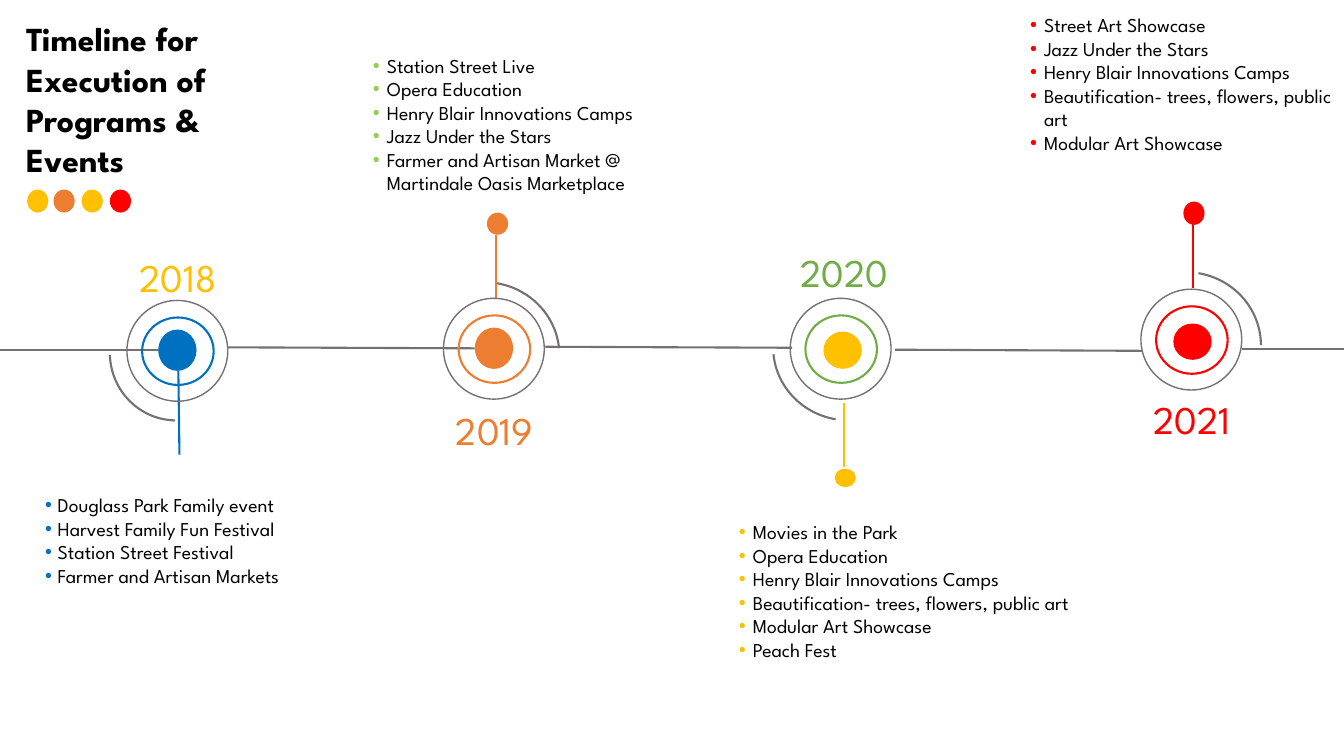
from lxml import etree
from pptx import Presentation
from pptx.dml.color import RGBColor
from pptx.enum.shapes import MSO_CONNECTOR as CONN, MSO_SHAPE as SHAPE
from pptx.enum.text import MSO_ANCHOR as ANCHOR, MSO_AUTO_SIZE as AUTO, PP_ALIGN as ALIGN
from pptx.oxml import parse_xml
from pptx.oxml.ns import nsdecls, qn
from pptx.util import Pt

COLORS = {
    "yellow": "FFC000", "orange": "ED7D31", "red": "FF0000", "blue": "0070C0",
    "green": "70AD47", "lime": "92D050", "gray": "767171", "black": "000000",
}
RGB = {name: RGBColor.from_string(value) for name, value in COLORS.items()}
FONT = "League Spartan"


def add_mark(shapes, kind, box, fill=None, line=None, width=1.5):
    sp = shapes.add_shape(kind, *map(Pt, box))
    sp.shadow.inherit = False
    if fill:
        sp.fill.solid()
        sp.fill.fore_color.rgb = RGB[fill]
    else:
        sp.fill.background()
    if line:
        sp.line.color.rgb = RGB[line]
        sp.line.width = Pt(width)
    else:
        sp.line.fill.background()
    return sp


def write_text(sp, box, lines, size, color="black", bold=False, align=ALIGN.LEFT, bullet=None):
    sp.left, sp.top, sp.width, sp.height = map(Pt, box)
    tf = sp.text_frame
    frame = {
        "word_wrap": True, "auto_size": AUTO.NONE, "vertical_anchor": ANCHOR.TOP,
        "margin_left": Pt(7.2), "margin_right": Pt(7.2),
        "margin_top": Pt(3.6), "margin_bottom": Pt(3.6),
    }
    for name, value in frame.items():
        setattr(tf, name, value)
    for i, text in enumerate(lines):
        p = tf.add_paragraph() if i else tf.paragraphs[0]
        if bullet:
            bullet_color, margin, hang = bullet
            pPr = p._p.get_or_add_pPr()
            pPr.set("marL", str(Pt(margin)))
            pPr.set("indent", str(-Pt(hang)))
            for xml in (
                f'<a:buClr {nsdecls("a")}><a:srgbClr val="{COLORS[bullet_color]}"/></a:buClr>',
                f'<a:buFont {nsdecls("a")} typeface="Arial"/>',
                f'<a:buChar {nsdecls("a")} char="•"/>',
            ):
                pPr.append(parse_xml(xml))
        layout = {"alignment": align, "space_before": Pt(0), "space_after": Pt(0), "line_spacing": 1.0}
        for name, value in layout.items():
            setattr(p, name, value)
        r = p.add_run()
        r.text = text
        for name, value in {"name": FONT, "size": Pt(size), "bold": bold}.items():
            setattr(r.font, name, value)
        r.font.color.rgb = RGB[color]


prs = Presentation()
prs.slide_width, prs.slide_height = Pt(960), Pt(540)
s = prs.slides.add_slide(prs.slide_layouts[4])

write_text(s.shapes.title, (11.5, 9.4, 169.2, 123.8),
           ["Timeline for Execution of Programs & Events"], 24, bold=True)

title_dots = s.shapes.add_group_shape()
for x, color in ((19.4, "yellow"), (38.2, "orange"), (58.3, "yellow"), (78.5, "red")):
    add_mark(title_dots.shapes, SHAPE.OVAL, (x, 135.4, 15.1, 16.4), fill=color)

WIDE_ARC = (167.96, 212.73)
milestones = [
    {
        "year": "2018", "label": (73.4, 177.1), "label_color": "yellow",
        "ring": (90.7, 214.6), "ring_color": "blue",
        "dot": (113, 235.4, 27.4, 29.5), "dot_color": "blue",
        "stem": (127.4, 265, 128.2, 324.7), "pin": None,
        "arc": (78.5, 204.5, 94.3, 95.8), "turn": 171.8, "sweep": (167.37, 4.07),
        "box": (11.5, 348.5, 259.2, 97.2), "bullet": ("blue", 22.5, 9),
        "events": ["Douglass Park Family event", "Harvest Family Fun Festival",
                   "Station Street Festival", "Farmer and Artisan Markets"],
    },
    {
        "year": "2019", "label": (299.5, 286.6), "label_color": "orange",
        "ring": (316.8, 213.1), "ring_color": "orange",
        "dot": (339.1, 234, 27.4, 29.5), "dot_color": "orange",
        "stem": (354.2, 167.8, 354.2, 213.1), "pin": (347.8, 151.9, 15.1, 15.8),
        "arc": (292.3, 201.6, 107.3, 104.4), "turn": 0, "sweep": WIDE_ARC,
        "box": (259.2, 34.6, 239, 108.7), "bullet": ("lime", 10, 10),
        "events": ["Station Street Live", "Opera Education",
                   "Henry Blair Innovations Camps", "Jazz Under the Stars",
                   "Farmer and Artisan Market @ Martindale Oasis Marketplace"],
    },
    {
        "year": "2020", "label": (549.4, 174.2), "label_color": "green",
        "ring": (564.5, 213.1), "ring_color": "green",
        "dot": (588.2, 236.9, 27.4, 26.6), "dot_color": "yellow",
        "stem": (603.1, 288, 603.1, 333.4), "pin": (596.2, 334.8, 15.1, 13),
        "arc": (552.2, 195.8, 107.3, 104.4), "turn": 180, "sweep": WIDE_ARC,
        "box": (520.6, 367.9, 277.9, 143.3), "bullet": ("yellow", 10, 10),
        "events": ["Movies in the Park", "Opera Education",
                   "Henry Blair Innovations Camps",
                   "Beautification- trees, flowers, public art",
                   "Modular Art Showcase", "Peach Fest"],
    },
    {
        "year": "2021", "label": (797.8, 278.6), "label_color": "red",
        "ring": (815, 206.6), "ring_color": "red",
        "dot": (838.1, 231.1, 27.4, 25.9), "dot_color": "red",
        "stem": (852.3, 159.8, 852.3, 205.9), "pin": (845.3, 144, 15.1, 16.6),
        "arc": (793.4, 194.4, 107.3, 104.4), "turn": 0, "sweep": (167.96, 215.92),
        "box": (728.6, 5.8, 239, 108.7), "bullet": ("red", 10, 10),
        "events": ["Street Art Showcase", "Jazz Under the Stars",
                   "Henry Blair Innovations Camps",
                   "Beautification- trees, flowers, public art",
                   "Modular Art Showcase"],
    },
]

axis = [(0, 249.8, 113, 249.8), (162.7, 248.1, 339.1, 248.8), (389.5, 247.7, 565.9, 248.4),
        (639.4, 249.8, 815.8, 250.6), (887, 249.1, 960, 249.1)]
lines = [(ends, "gray") for ends in axis] + [(m["stem"], m["dot_color"]) for m in milestones]
for ends, color in lines:
    cxn = s.shapes.add_connector(CONN.STRAIGHT, *map(Pt, ends))
    cxn.line.color.rgb = RGB[color]
    cxn.line.width = Pt(1.5)
    etree.SubElement(cxn._element.spPr, qn("a:effectLst"))

for idx, m in enumerate(milestones, 1):
    arc = add_mark(s.shapes, SHAPE.ARC, m["arc"], line="gray")
    arc.adjustments[0], arc.adjustments[1] = m["sweep"]
    arc.rotation = m["turn"]
    x, y = m["ring"]
    add_mark(s.shapes, SHAPE.OVAL, m["dot"], fill=m["dot_color"])
    add_mark(s.shapes, SHAPE.OVAL, (x + 10.8, y + 12.2, 51.1, 48.2), line=m["ring_color"])
    add_mark(s.shapes, SHAPE.OVAL, (x, y, 72, 72), line="gray", width=1)
    if m["pin"]:
        add_mark(s.shapes, SHAPE.OVAL, m["pin"], fill=m["dot_color"])
    label_box = (*m["label"], 107.3, 41)
    label = s.shapes.add_textbox(*map(Pt, label_box))
    write_text(label, label_box, [m["year"]], 28, m["label_color"], align=ALIGN.CENTER)
    write_text(s.placeholders[idx], m["box"], m["events"], 14, bullet=m["bullet"])

prs.save("out.pptx")
